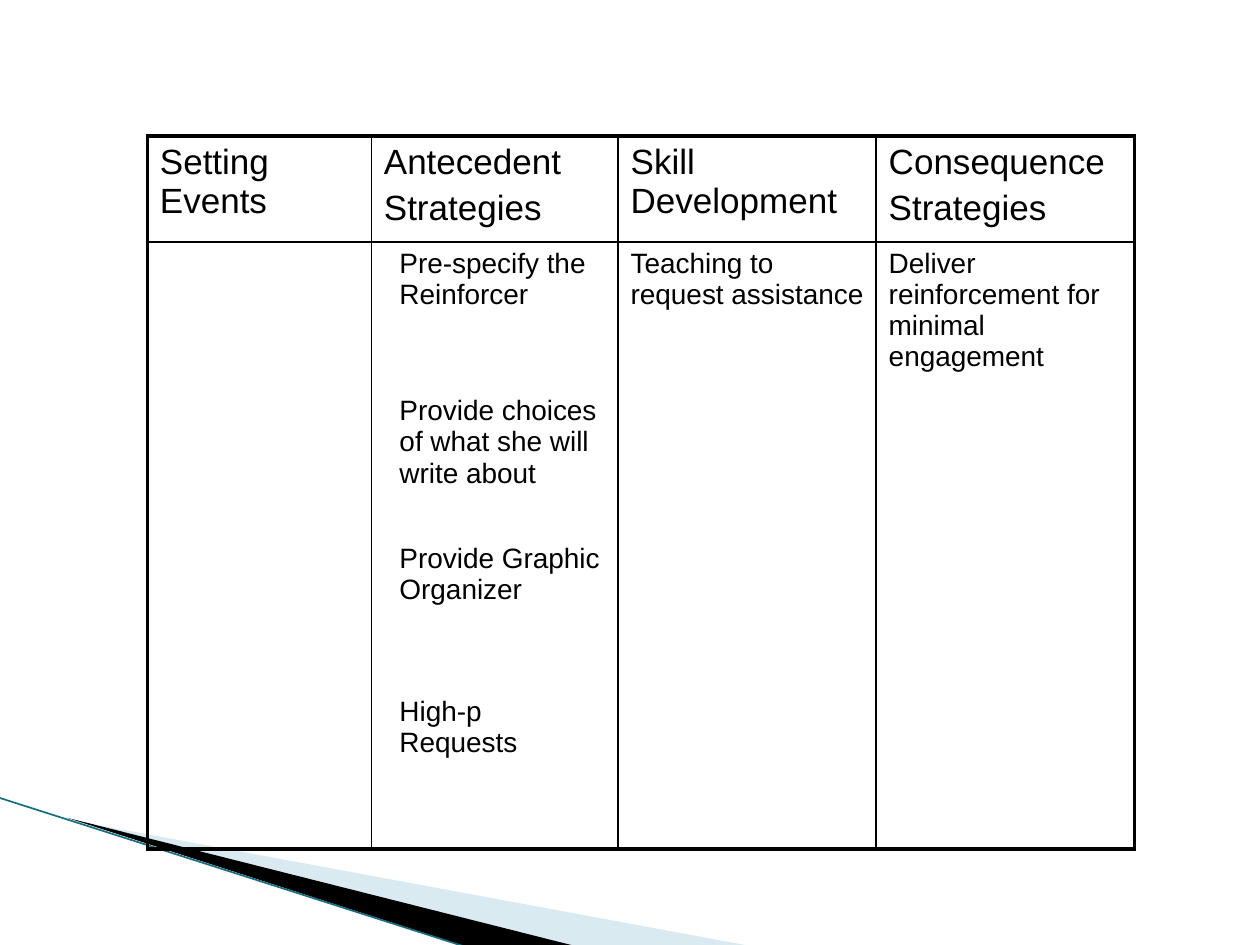
"""Build a slide with a table of behaviour support strategies above a corner swoosh."""
import pptx
import pptx.dml.color
import pptx.enum.shapes
import pptx.oxml
import pptx.oxml.ns
import pptx.util
from lxml import etree

Pt = pptx.util.Pt
RGBColor = pptx.dml.color.RGBColor
qn = pptx.oxml.ns.qn

BLACK = RGBColor(0, 0, 0)
PALE_BLUE = RGBColor(0xA0, 0xCB, 0xDC)
TEAL = RGBColor(0x13, 0x70, 0x82)
FONT = "Arial"
HEADER_SIZE, BODY_SIZE = 20, 16
OUTER, INNER = 2.25, 1
INDENT = 8.9

HEADERS = [
    ["Setting Events"],
    ["Antecedent", "Strategies"],
    ["Skill Development"],
    ["Consequence", "Strategies"],
]
ANTECEDENTS = [
    "Pre-specify the Reinforcer",
    "Provide choices of what she will write about",
    "Provide Graphic Organizer",
    "High-p Requests",
]
SKILL = "Teaching to request assistance"
CONSEQUENCE = "Deliver reinforcement for minimal engagement"

TABLE_LEFT, TABLE_TOP = 84.2, 77.8
COLUMNS = [128, 141, 147.5, 147.5]
ROWS = [60.5, 84.2, 84.2, 87.8, 52.6, 38.2]
WEDGES = [
    ([(39.6, 468.5), (428.4, 540.5), (328.3, 540.5)], PALE_BLUE, 40),
    ([(38.2, 467.3), (329, 540.7), (267.8, 541.4)], BLACK, 100),
]
EDGE = [(-0.7, 455.8), (267.1, 541.4)]


def add_wedge(slide, points, color, opacity):
    start, *rest = [(Pt(x), Pt(y)) for x, y in points]
    builder = slide.shapes.build_freeform(*start)
    builder.add_line_segments(rest, close=True)
    sp = builder.convert_to_shape()
    sp.shadow.inherit = False
    sp.fill.solid()
    sp.fill.fore_color.rgb = color
    sp.line.fill.background()
    if opacity < 100:
        clr = sp.fill._xPr.find(qn("a:solidFill"))[0]
        etree.SubElement(clr, qn("a:alpha"), val=str(opacity * 1000))


def add_edge(slide, start, end):
    line = slide.shapes.add_connector(
        pptx.enum.shapes.MSO_CONNECTOR.STRAIGHT, *[Pt(v) for v in start + end])
    line.line.color.rgb = TEAL
    line.line.width = Pt(0.95)
    etree.SubElement(line._element.spPr, qn("a:effectLst"))


def set_borders(cell, widths):
    tc_pr = cell._tc.get_or_add_tcPr()
    for i, (side, width) in enumerate(zip("LRTB", widths)):
        ln = etree.Element(qn(f"a:ln{side}"), w=str(Pt(width)))
        if width:
            fill = etree.SubElement(ln, qn("a:solidFill"))
            etree.SubElement(fill, qn("a:srgbClr"), val=str(BLACK))
        else:
            etree.SubElement(ln, qn("a:noFill"))
        tc_pr.insert(i, ln)


def write(cell, lines, size, indent=0):
    tf = cell.text_frame
    for i, text in enumerate(lines):
        p = tf.add_paragraph() if i else tf.paragraphs[0]
        p.text = text
        p.font.name = FONT
        p.font.size = Pt(size)
        p.font.color.rgb = BLACK
        if i:
            p.space_before = Pt(size * 0.2)
        if indent:
            p_pr = p._p.get_or_add_pPr()
            p_pr.set("marL", str(Pt(indent)))
            p_pr.set("indent", "0")


def add_strategy_table(slide):
    n_rows, n_cols = len(ROWS), len(COLUMNS)
    table = slide.shapes.add_table(
        n_rows, n_cols, Pt(TABLE_LEFT), Pt(TABLE_TOP),
        Pt(sum(COLUMNS)), Pt(sum(ROWS))).table
    table.first_row = table.horz_banding = False
    for column, width in zip(table.columns, COLUMNS):
        column.width = Pt(width)
    for row, height in zip(table.rows, ROWS):
        row.height = Pt(height)
    for r in range(n_rows):
        for c in range(n_cols):
            cell = table.cell(r, c)
            cell.fill.background()
            set_borders(cell, (
                OUTER if c == 0 else INNER,
                OUTER if c == n_cols - 1 else INNER,
                {0: OUTER, 1: INNER}.get(r, 0),
                {0: INNER, n_rows - 1: OUTER}.get(r, 0)))
    for c, lines in enumerate(HEADERS):
        write(table.cell(0, c), lines, HEADER_SIZE)
    for r, text in enumerate(ANTECEDENTS, 1):
        write(table.cell(r, 1), [text], BODY_SIZE, INDENT)
    write(table.cell(1, 2), [SKILL], BODY_SIZE)
    write(table.cell(1, 3), [CONSEQUENCE], BODY_SIZE)


def main():
    prs = pptx.Presentation()
    prs.slide_width, prs.slide_height = Pt(720), Pt(540)
    slide = prs.slides.add_slide(prs.slide_layouts[6])
    for points, color, opacity in WEDGES:
        add_wedge(slide, points, color, opacity)
    add_edge(slide, *EDGE)
    add_strategy_table(slide)
    prs.save("out.pptx")


if __name__ == "__main__":
    main()
